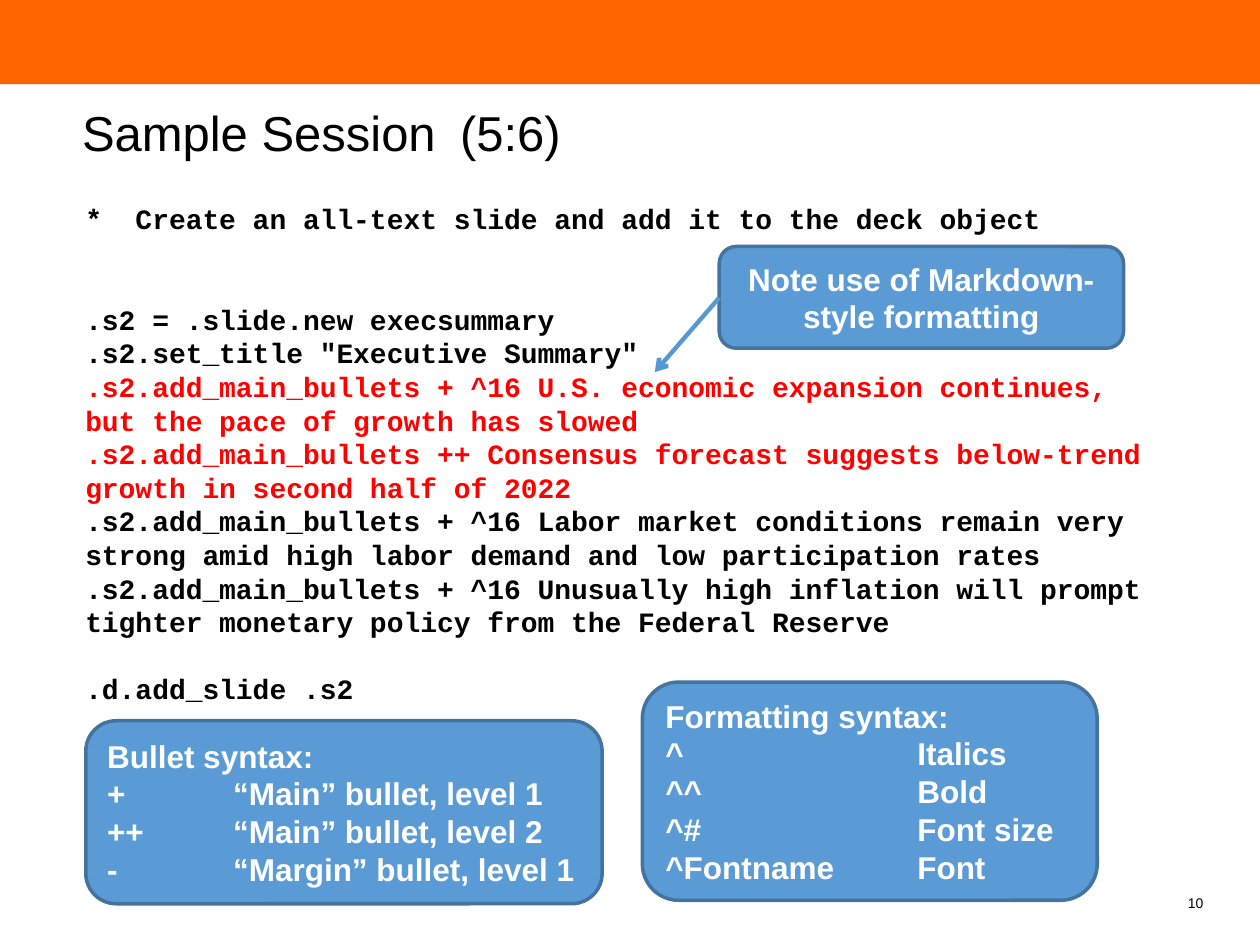
from lxml import etree
from pptx import Presentation
from pptx import util as u
from pptx.dml.color import RGBColor
from pptx.enum import shapes, text
from pptx.oxml.ns import qn

# Content
TITLE = "Sample Session\t(5:6)"
PAGE = "10"
# Each code line: text, highlighted, blank lines before it
CODE = [
    ("*  Create an all-text slide and add it to the deck object", False, 0),
    (".s2 = .slide.new execsummary", False, 2),
    ('.s2.set_title "Executive Summary"', False, 0),
    (".s2.add_main_bullets + ^16 U.S. economic expansion continues, "
     "but the pace of growth has slowed", True, 0),
    (".s2.add_main_bullets ++ Consensus forecast suggests below-trend "
     "growth in second half of 2022", True, 0),
    (".s2.add_main_bullets + ^16 Labor market conditions remain very "
     "strong amid high labor demand and low participation rates", False, 0),
    (".s2.add_main_bullets + ^16 Unusually high inflation will prompt "
     "tighter monetary policy from the Federal Reserve", False, 0),
    (".d.add_slide .s2", False, 1),
]
# Each panel: lines, alignment, (left, top, width, height) in cm
PANELS = [
    (["Note use of Markdown-style formatting"], text.PP_ALIGN.CENTER,
     (14.5, 4.97, 8.15, 2.05)),
    (["Formatting syntax:", "^\t\tItalics", "^^\t\tBold", "^#\t\tFont size",
      "^Fontname\tFont"], text.PP_ALIGN.LEFT, (12.95, 13.75, 9.17, 4.4)),
    (["Bullet syntax:", "+\t“Main” bullet, level 1",
      "++\t“Main” bullet, level 2", "-\t“Margin” bullet, level 1"],
     text.PP_ALIGN.LEFT, (1.73, 14.53, 10.41, 3.69)),
]
POINTER = (14.5, 6, 13.2, 7.5)


class Theme:
    sans, mono = "Arial", "Courier New"
    title, panel, code, page = 28, 18, 16, 8
    leading = 1.2
    tab = 2.54
    black, white, red = "000000", "FFFFFF", "FF0000"
    band, blue, edge, arrow = "FF6600", "5B9BD5", "43739E", "5698D3"


def rgb(value):
    return RGBColor.from_string(value)


def cm(*lengths):
    return [u.Cm(length) for length in lengths]


def place(shape, box):
    shape.left, shape.top, shape.width, shape.height = cm(*box)


def style(paragraph, size, color, face=Theme.sans, bold=False,
          align=text.PP_ALIGN.LEFT, blanks=0):
    """Format one paragraph, with blank lines given as space before."""
    paragraph.alignment = align
    leading = size * Theme.leading
    paragraph.line_spacing = u.Pt(leading)
    paragraph.space_before = u.Pt(blanks * leading)
    for run in paragraph.runs:
        run.font.name, run.font.size, run.font.bold = face, u.Pt(size), bold
        run.font.color.rgb = rgb(color)


def add_tabs(paragraph, *stops):
    tabs = etree.SubElement(paragraph._p.get_or_add_pPr(), qn("a:tabLst"))
    for stop in stops:
        etree.SubElement(tabs, qn("a:tab"), pos=str(u.Cm(stop)), algn="l")


def add_block(slide, kind, box, fill):
    block = slide.shapes.add_shape(kind, *cm(*box))
    block.shadow.inherit = False
    block.fill.solid()
    block.fill.fore_color.rgb = rgb(fill)
    return block


def add_panel(slide, lines, align, box):
    panel = add_block(slide, shapes.MSO_SHAPE.ROUNDED_RECTANGLE, box, Theme.blue)
    panel.line.color.rgb = rgb(Theme.edge)
    panel.line.width = u.Pt(2)
    frame = panel.text_frame
    frame.word_wrap = True
    frame.vertical_anchor = text.MSO_ANCHOR.MIDDLE
    frame.text = "\n".join(lines)
    for paragraph in frame.paragraphs:
        if "\t" in paragraph.text:
            add_tabs(paragraph, Theme.tab, 2 * Theme.tab)
        style(paragraph, Theme.panel, Theme.white, bold=True, align=align)


def add_pointer(slide):
    pointer = slide.shapes.add_connector(shapes.MSO_CONNECTOR.STRAIGHT,
                                         *cm(*POINTER))
    pointer.line.color.rgb = rgb(Theme.arrow)
    pointer.line.width = u.Pt(2.5)
    etree.SubElement(pointer.line._get_or_add_ln(), qn("a:tailEnd"), type="arrow")
    etree.SubElement(pointer._element.spPr, qn("a:effectLst"))


def main():
    deck = Presentation()
    deck.slide_width, deck.slide_height = cm(25.4, 19.05)
    slide = deck.slides.add_slide(deck.slide_layouts[5])

    # Top band
    band = add_block(slide, shapes.MSO_SHAPE.RECTANGLE, (0, 0, 25.4, 1.7),
                     Theme.band)
    band.line.fill.background()

    # Title
    title = slide.shapes.title
    place(title, (1.4, 1.93, 22.86, 2.13))
    heading = title.text_frame
    heading.auto_size = text.MSO_AUTO_SIZE.NONE
    heading.vertical_anchor = text.MSO_ANCHOR.TOP
    heading.text = TITLE
    add_tabs(heading.paragraphs[0], 3 * Theme.tab)
    style(heading.paragraphs[0], Theme.title, Theme.black)

    # Page number
    page = slide.shapes.add_textbox(*cm(23.27, 18.03, 0.99, 1.02)).text_frame
    page.margin_left = page.margin_right = page.margin_top = page.margin_bottom = 0
    page.word_wrap = True
    page.text = PAGE
    style(page.paragraphs[0], Theme.page, Theme.black, align=text.PP_ALIGN.RIGHT)

    # Code listing
    code = slide.shapes.add_textbox(*cm(1.47, 3.94, 22.15, 10.52)).text_frame
    code.word_wrap = True
    code.text = "\n".join(line for line, _, _ in CODE)
    for paragraph, (_, marked, blanks) in zip(code.paragraphs, CODE):
        style(paragraph, Theme.code, Theme.red if marked else Theme.black,
              Theme.mono, bold=True, blanks=blanks)

    # Notes on syntax, and the arrow to the marked code
    for lines, align, box in PANELS:
        add_panel(slide, lines, align, box)
    add_pointer(slide)

    deck.save("out.pptx")


if __name__ == "__main__":
    main()
